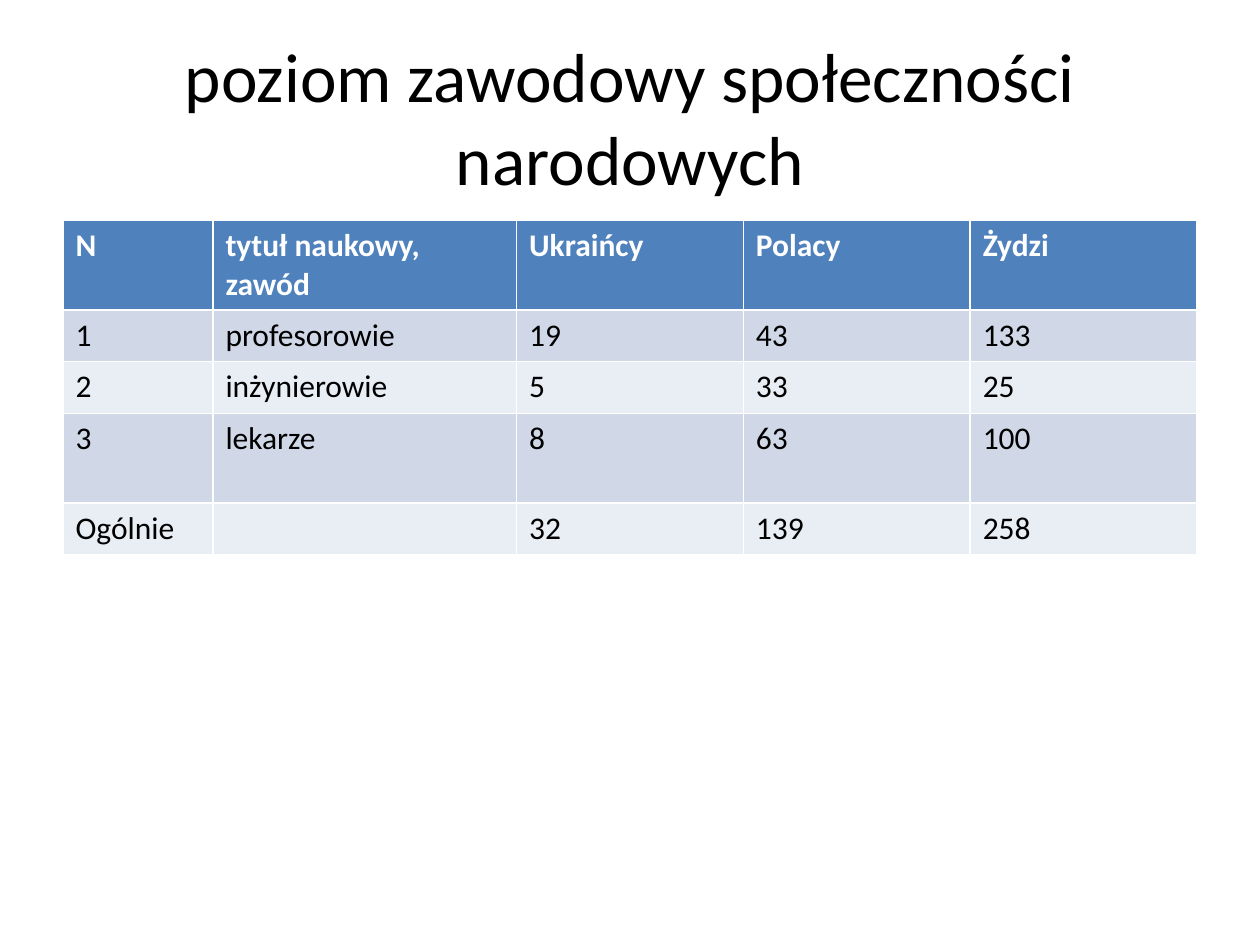
"""Build a slide with a table of professions by national community."""
from pptx import Presentation
from pptx.dml.color import RGBColor
from pptx.enum.text import MSO_ANCHOR, MSO_AUTO_SIZE, PP_ALIGN
from pptx.util import Inches, Pt

MIDDLE = MSO_ANCHOR.MIDDLE
CENTER = PP_ALIGN.CENTER
NO_FIT = MSO_AUTO_SIZE.NONE

BLACK = RGBColor(0x00, 0x00, 0x00)
WHITE = RGBColor(0xFF, 0xFF, 0xFF)
BLUE = RGBColor(0x4F, 0x81, 0xBD)
BANDS = (RGBColor(0xD0, 0xD8, 0xE8), RGBColor(0xE9, 0xED, 0xF4))
FONT = "Calibri"

TITLE = "poziom zawodowy społeczności narodowych"
ROWS = [
    ("N", "tytuł naukowy, zawód", "Ukraińcy", "Polacy", "Żydzi"),
    ("1", "profesorowie", "19", "43", "133"),
    ("2", "inżynierowie", "5", "33", "25"),
    ("3", "lekarze", "8", "63", "100"),
    ("Ogólnie", "", "32", "139", "258"),
]
WIDTHS = (1.19, 2.41, 1.8, 1.8, 1.8)
HEIGHTS = (0.71, 0.41, 0.41, 0.71, 0.41)
LEFT, WIDTH = 0.5, 9


def style(para, size, color, bold=False):
    for run in para.runs:
        font = run.font
        font.name, font.size, font.bold = FONT, Pt(size), bold
        font.color.rgb = color


def add_title(slide):
    title = slide.shapes.title
    title.left, title.top = Inches(LEFT), Inches(0.3)
    title.width, title.height = Inches(WIDTH), Inches(1.25)
    frame = title.text_frame
    frame.text = TITLE
    frame.word_wrap = True
    frame.auto_size = NO_FIT
    frame.vertical_anchor = MIDDLE
    para = frame.paragraphs[0]
    para.alignment = CENTER
    style(para, 39.6, BLACK)


def add_grid(slide):
    frame = slide.shapes.add_table(
        len(ROWS), len(WIDTHS), Inches(LEFT), Inches(1.75),
        Inches(WIDTH), Inches(sum(HEIGHTS)))
    table = frame.table
    for col, width in zip(table.columns, WIDTHS):
        col.width = Inches(width)
    for i, (row, height) in enumerate(zip(table.rows, HEIGHTS)):
        row.height = Inches(height)
        head = i == 0
        for cell, text in zip(row.cells, ROWS[i]):
            cell.fill.solid()
            cell.fill.fore_color.rgb = BLUE if head else BANDS[(i - 1) % 2]
            cell.text_frame.text = text
            style(cell.text_frame.paragraphs[0], 18, WHITE if head else BLACK, head)


def main():
    deck = Presentation()
    deck.slide_width, deck.slide_height = Inches(10), Inches(7.5)
    slide = deck.slides.add_slide(deck.slide_layouts[5])
    add_title(slide)
    add_grid(slide)
    deck.save("out.pptx")


if __name__ == "__main__":
    main()
